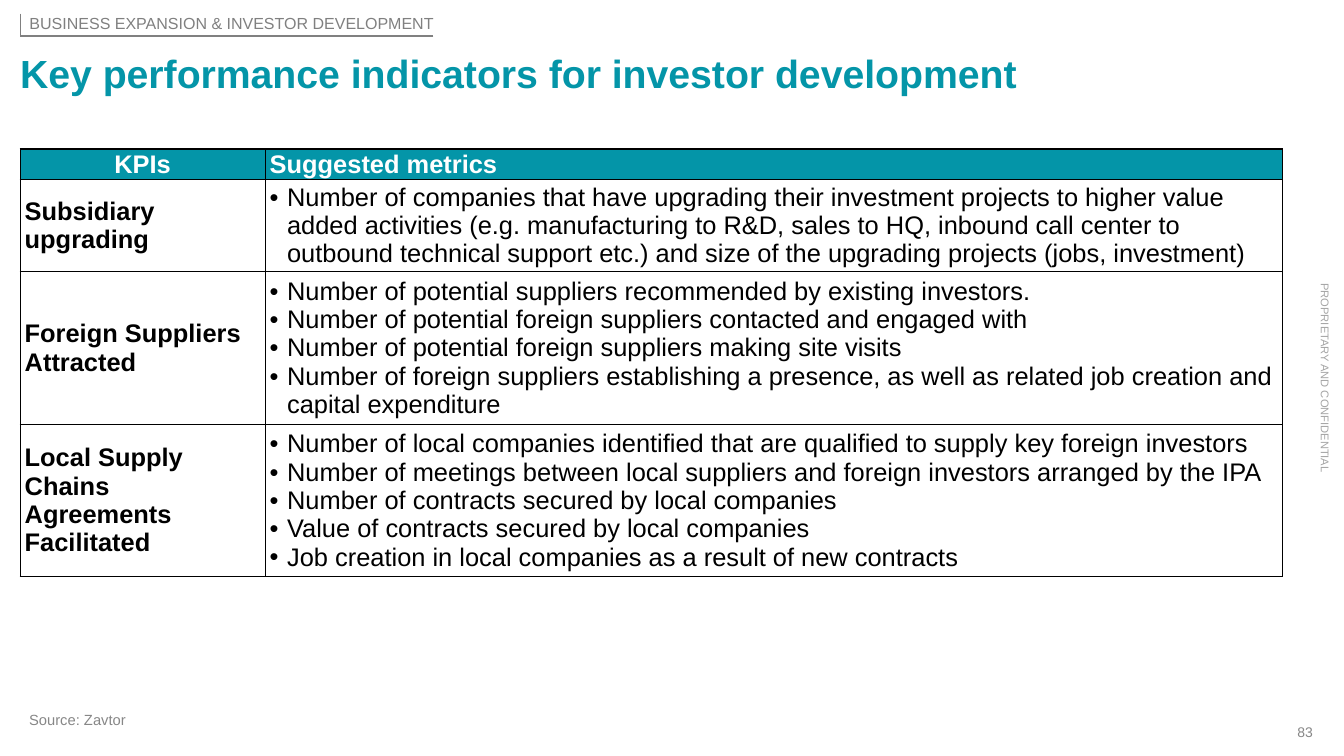
from dataclasses import dataclass

from lxml import etree
from pptx import Presentation
from pptx.dml.color import RGBColor
from pptx.enum.shapes import MSO_CONNECTOR
from pptx.enum.text import MSO_ANCHOR, PP_ALIGN
from pptx.oxml.ns import qn
from pptx.util import Pt

PX = 9144  # 100 px to the inch
FONT = "Arial"
COLOURS = {
    "teal": "0495A8",
    "white": "FFFFFF",
    "black": "000000",
    "rule": "808080",
    "grey": "878787",
    "pale": "A5A5A5",
}
LEFT, CENTER, RIGHT = PP_ALIGN.LEFT, PP_ALIGN.CENTER, PP_ALIGN.RIGHT
TOP, MIDDLE = MSO_ANCHOR.TOP, MSO_ANCHOR.MIDDLE
STRAIGHT = MSO_CONNECTOR.STRAIGHT


@dataclass
class Label:
    text: str
    area: tuple[int, int, int, int]
    size: float
    colour: str
    align: PP_ALIGN = LEFT
    anchor: MSO_ANCHOR = TOP
    bold: bool = False
    rotation: int = 0
    insets: tuple[int, int, int, int] = (0, 0, 0, 0)


@dataclass
class Rule:
    start: tuple[int, int]
    end: tuple[int, int]
    width: float


@dataclass
class Indicator:
    name: str
    metrics: list[str]
    height: int


LABELS = [
    Label("83", (1406, 791, 30, 19), 11, "grey", RIGHT),
    Label("PROPRIETARY AND CONFIDENTIAL", (1343, 406, 213, 15), 8.8, "pale", CENTER, rotation=90),
    Label("Key performance indicators for investor development", (22, 54, 1405, 52), 30.9, "teal",
          bold=True),
    Label("Source: Zavtor", (22, 773, 554, 30), 11.6, "grey", insets=(10, 5, 10, 5)),
    Label("BUSINESS EXPANSION & INVESTOR DEVELOPMENT", (22, 15, 452, 24), 12.6, "rule", RIGHT,
          MIDDLE, insets=(4, 0, 0, 3)),
]
RULES = [Rule((474, 39), (22, 39), 1.5), Rule((22, 15), (22, 39), 0.75)]

TABLE_LEFT, TABLE_TOP = 22, 163
COLUMN_WIDTHS = (268, 1113)
HEADINGS = (("KPIs", CENTER), ("Suggested metrics", LEFT))
HEADING_HEIGHT = 33
TABLE_SIZE = 20
BULLET_INDENT = 19
INDICATORS = [
    Indicator("Subsidiary upgrading", [
        "Number of companies that have upgrading their investment projects to higher value added "
        "activities (e.g. manufacturing to R&D, sales to HQ, inbound call center to outbound "
        "technical support etc.) and size of the upgrading projects (jobs, investment)",
    ], 101),
    Indicator("Foreign Suppliers Attracted", [
        "Number of potential suppliers recommended by existing investors.",
        "Number of potential foreign suppliers contacted and engaged with",
        "Number of potential foreign suppliers making site visits",
        "Number of foreign suppliers establishing a presence, as well as related job creation and "
        "capital expenditure",
    ], 166),
    Indicator("Local Supply Chains Agreements Facilitated", [
        "Number of local companies identified that are qualified to supply key foreign investors",
        "Number of meetings between local suppliers and foreign investors arranged by the IPA",
        "Number of contracts secured by local companies",
        "Value of contracts secured by local companies",
        "Job creation in local companies as a result of new contracts",
    ], 167),
]


def rgb(colour: str) -> RGBColor:
    return RGBColor.from_string(COLOURS[colour])


def format_paragraph(para, size: float, colour: str, bold: bool, align: PP_ALIGN) -> None:
    para.alignment = align
    for span in para.runs:
        span.font.name = FONT
        span.font.size = Pt(size)
        span.font.bold = bold
        span.font.color.rgb = rgb(colour)


def set_margins(target, insets: tuple[int, int, int, int]) -> None:
    sides = ("margin_left", "margin_top", "margin_right", "margin_bottom")
    for side, inset in zip(sides, insets):
        setattr(target, side, inset * PX)


def add_label(page, label: Label) -> None:
    box = page.shapes.add_textbox(*(length * PX for length in label.area))
    box.rotation = label.rotation
    frame = box.text_frame
    frame.word_wrap = True
    frame.vertical_anchor = label.anchor
    set_margins(frame, label.insets)
    frame.text = label.text
    format_paragraph(frame.paragraphs[0], label.size, label.colour, label.bold, label.align)


def add_rule(page, rule: Rule) -> None:
    ends = (length * PX for length in rule.start + rule.end)
    line = page.shapes.add_connector(STRAIGHT, *ends)
    line.line.color.rgb = rgb("rule")
    line.line.width = Pt(rule.width)
    etree.SubElement(line._element.spPr, qn("a:effectLst"))


def add_bullet(para) -> None:
    properties = para._p.get_or_add_pPr()
    properties.set("marL", str(BULLET_INDENT * PX))
    properties.set("indent", str(-BULLET_INDENT * PX))
    colour = etree.SubElement(properties, qn("a:buClr"))
    etree.SubElement(colour, qn("a:srgbClr"), val=COLOURS["black"])
    etree.SubElement(properties, qn("a:buFont"), typeface=FONT)
    etree.SubElement(properties, qn("a:buChar"), char="•")


def add_borders(cell) -> None:
    properties = cell._tc.get_or_add_tcPr()
    for index, side in enumerate(("lnL", "lnR", "lnT", "lnB")):
        border = etree.Element(qn(f"a:{side}"), w=str(Pt(1)))
        fill = etree.SubElement(border, qn("a:solidFill"))
        etree.SubElement(fill, qn("a:srgbClr"), val=COLOURS["black"])
        properties.insert(index, border)


def fill_cell(cell, lines: list[str], colour: str, fill: str, bold: bool,
              align: PP_ALIGN = LEFT, bulleted: bool = False) -> None:
    cell.vertical_anchor = MIDDLE
    set_margins(cell, (5, 0, 5, 0))
    cell.fill.solid()
    cell.fill.fore_color.rgb = rgb(fill)
    add_borders(cell)
    cell.text_frame.text = "\n".join(lines)
    for para in cell.text_frame.paragraphs:
        if bulleted:
            add_bullet(para)
        format_paragraph(para, TABLE_SIZE, colour, bold, align)


def add_indicator_table(page) -> None:
    heights = [HEADING_HEIGHT] + [indicator.height for indicator in INDICATORS]
    area = (TABLE_LEFT, TABLE_TOP, sum(COLUMN_WIDTHS), sum(heights))
    table = page.shapes.add_table(len(heights), len(COLUMN_WIDTHS),
                                  *(length * PX for length in area)).table
    table.first_row = False
    table.horz_banding = False
    for column, width in zip(table.columns, COLUMN_WIDTHS):
        column.width = width * PX
    for row, height in zip(table.rows, heights):
        row.height = height * PX
    for index, (heading, align) in enumerate(HEADINGS):
        fill_cell(table.cell(0, index), [heading], "white", "teal", True, align)
    for index, indicator in enumerate(INDICATORS, start=1):
        fill_cell(table.cell(index, 0), [indicator.name], "black", "white", True)
        fill_cell(table.cell(index, 1), indicator.metrics, "black", "white", False, bulleted=True)


def main() -> None:
    deck = Presentation()
    deck.slide_width = 1470 * PX
    deck.slide_height = 827 * PX
    page = deck.slides.add_slide(deck.slide_layouts[6])

    # Title, section tag, source and page furniture
    for label in LABELS:
        add_label(page, label)

    # Rules around the section tag
    for rule in RULES:
        add_rule(page, rule)

    # Indicators and their metrics
    add_indicator_table(page)

    deck.save("out.pptx")


if __name__ == "__main__":
    main()
